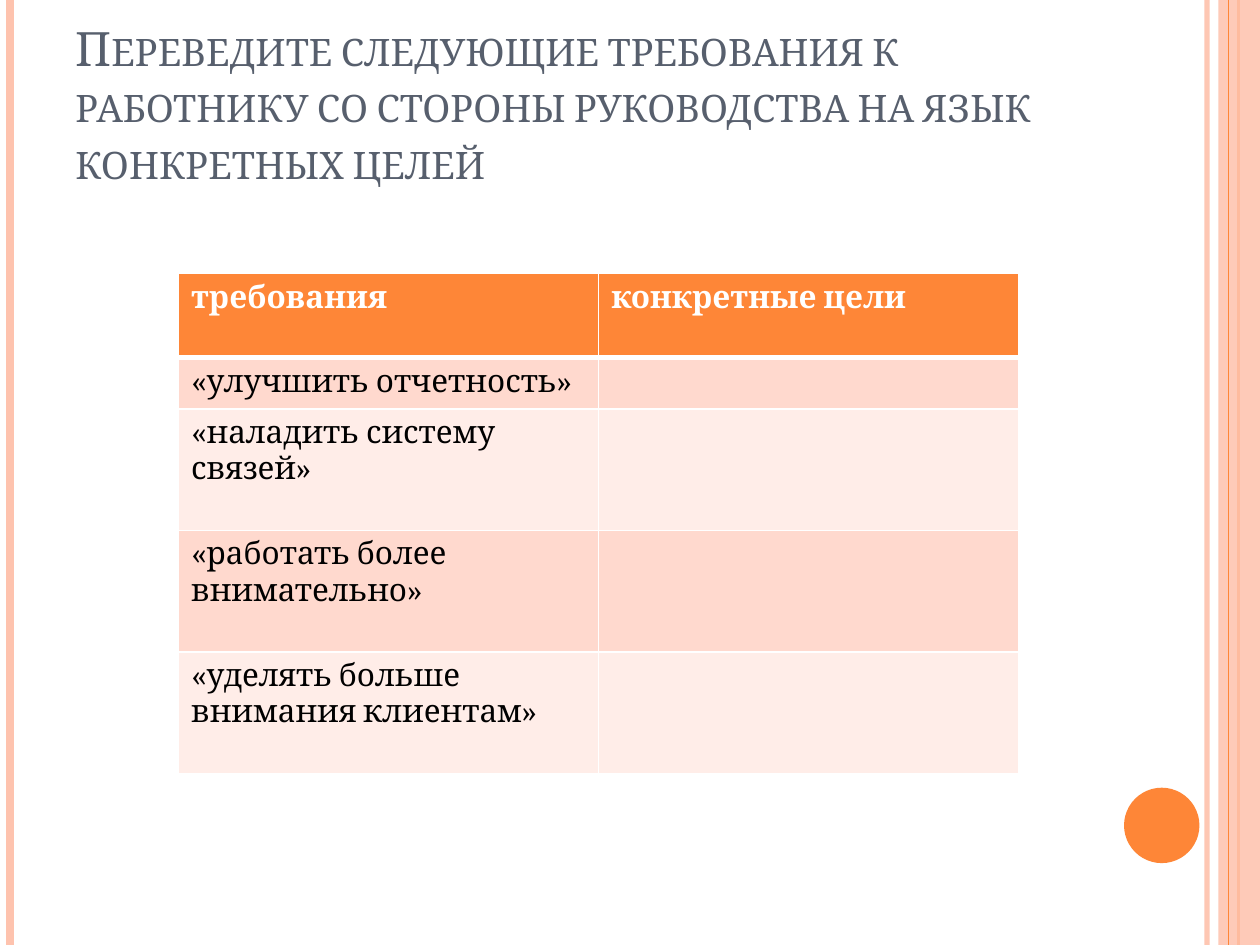
"""Build a slide with a table that turns job requirements into concrete goals."""
from lxml.etree import SubElement
from pptx import Presentation
from pptx.dml.color import RGBColor
from pptx.enum.shapes import MSO_CONNECTOR, MSO_SHAPE
from pptx.enum.text import MSO_ANCHOR
from pptx.oxml.ns import qn
from pptx.util import Cm, Pt

ORANGE = RGBColor(0xFE, 0x86, 0x37)
PEACH = RGBColor(0xFE, 0xC3, 0xAE)
SLATE = RGBColor(0x57, 0x5F, 0x6D)
WHITE = RGBColor(0xFF, 0xFF, 0xFF)
BLACK = RGBColor(0, 0, 0)
BANDS = (RGBColor(0xFF, 0xD9, 0xCE), RGBColor(0xFF, 0xED, 0xE8))

WIDTH, HEIGHT = 25.4, 19.05
TITLE = "Переведите следующие требования к работнику со стороны руководства на язык конкретных целей"
ROWS = [
    ("требования", "конкретные цели"),
    ("«улучшить отчетность»", ""),
    ("«наладить систему связей»", ""),
    ("«работать более внимательно»", ""),
    ("«уделять больше внимания клиентам»", ""),
]
ROW_HEIGHTS = [1.7, 1.03, 2.45, 2.45, 2.45]
LINES_BEHIND = [(24.33, PEACH, 3, 93), (0.21, PEACH, 4.5, 100), (24.97, ORANGE, 1.5, 100)]
LINES_IN_FRONT = [(24.77, ORANGE, 0.75, 100)]


def write_text(frame, text, size=18, color=BLACK, bold=False, small_caps=False):
    frame.word_wrap = True
    span = frame.paragraphs[0].add_run()
    span.text = text
    span.font.name = "Cambria"
    span.font.size = Pt(size)
    span.font.bold = bold
    span.font.color.rgb = color
    if small_caps:
        span.font._element.set("cap", "small")


def set_opacity(fill_parent, percent):
    color = fill_parent.find(qn("a:solidFill"))[0]
    SubElement(color, qn("a:alpha"), val=str(percent * 1000))


def add_vertical_lines(page, lines):
    for x, color, width, opacity in lines:
        line = page.shapes.add_connector(MSO_CONNECTOR.STRAIGHT, Cm(x), 0, Cm(x), Cm(HEIGHT))
        line.line.color.rgb = color
        line.line.width = Pt(width)
        properties = line._element.spPr
        SubElement(properties, qn("a:effectLst"))
        if opacity < 100:
            set_opacity(properties.find(qn("a:ln")), opacity)


def add_filled_shape(page, kind, left, top, width, height, color):
    shape = page.shapes.add_shape(kind, Cm(left), Cm(top), Cm(width), Cm(height))
    shape.shadow.inherit = False
    shape.fill.solid()
    shape.fill.fore_color.rgb = color
    shape.line.fill.background()
    return shape


def set_borders(cell, top, bottom):
    properties = cell._tc.get_or_add_tcPr()
    widths = {"a:lnL": 1, "a:lnR": 1, "a:lnT": top, "a:lnB": bottom}
    for position, (tag, width) in enumerate(widths.items()):
        border = SubElement(properties, qn(tag), w=str(Pt(width)))
        fill = SubElement(border, qn("a:solidFill"))
        SubElement(fill, qn("a:srgbClr"), val=str(WHITE))
        properties.insert(position, border)


def add_goal_table(page):
    frame = page.shapes.add_table(len(ROWS), 2, Cm(3.6), Cm(5.51), Cm(16.94), Cm(sum(ROW_HEIGHTS)))
    table = frame.table
    for row_index, (texts, height) in enumerate(zip(ROWS, ROW_HEIGHTS)):
        table.rows[row_index].height = Cm(height)
        header = row_index == 0
        for column_index, text in enumerate(texts):
            cell = table.cell(row_index, column_index)
            cell.fill.solid()
            cell.fill.fore_color.rgb = ORANGE if header else BANDS[(row_index - 1) % 2]
            set_borders(cell, 3 if row_index == 1 else 1, 3 if header else 1)
            if text:
                write_text(cell.text_frame, text, color=WHITE if header else BLACK, bold=header)


def main():
    deck = Presentation()
    deck.slide_width, deck.slide_height = Cm(WIDTH), Cm(HEIGHT)
    page = deck.slides.add_slide(deck.slide_layouts[6])

    add_vertical_lines(page, LINES_BEHIND)
    band = add_filled_shape(page, MSO_SHAPE.RECTANGLE, 24.56, 0, 0.84, HEIGHT, PEACH)
    set_opacity(band._element.spPr, 87)
    add_vertical_lines(page, LINES_IN_FRONT)
    add_filled_shape(page, MSO_SHAPE.OVAL, 22.66, 15.88, 1.52, 1.52, ORANGE)

    title = page.shapes.add_textbox(Cm(1.27), Cm(0.76), Cm(20.75), Cm(3.18))
    title.text_frame.vertical_anchor = MSO_ANCHOR.BOTTOM
    write_text(title.text_frame, TITLE, size=27, color=SLATE, small_caps=True)
    add_goal_table(page)
    deck.save("out.pptx")


if __name__ == "__main__":
    main()
